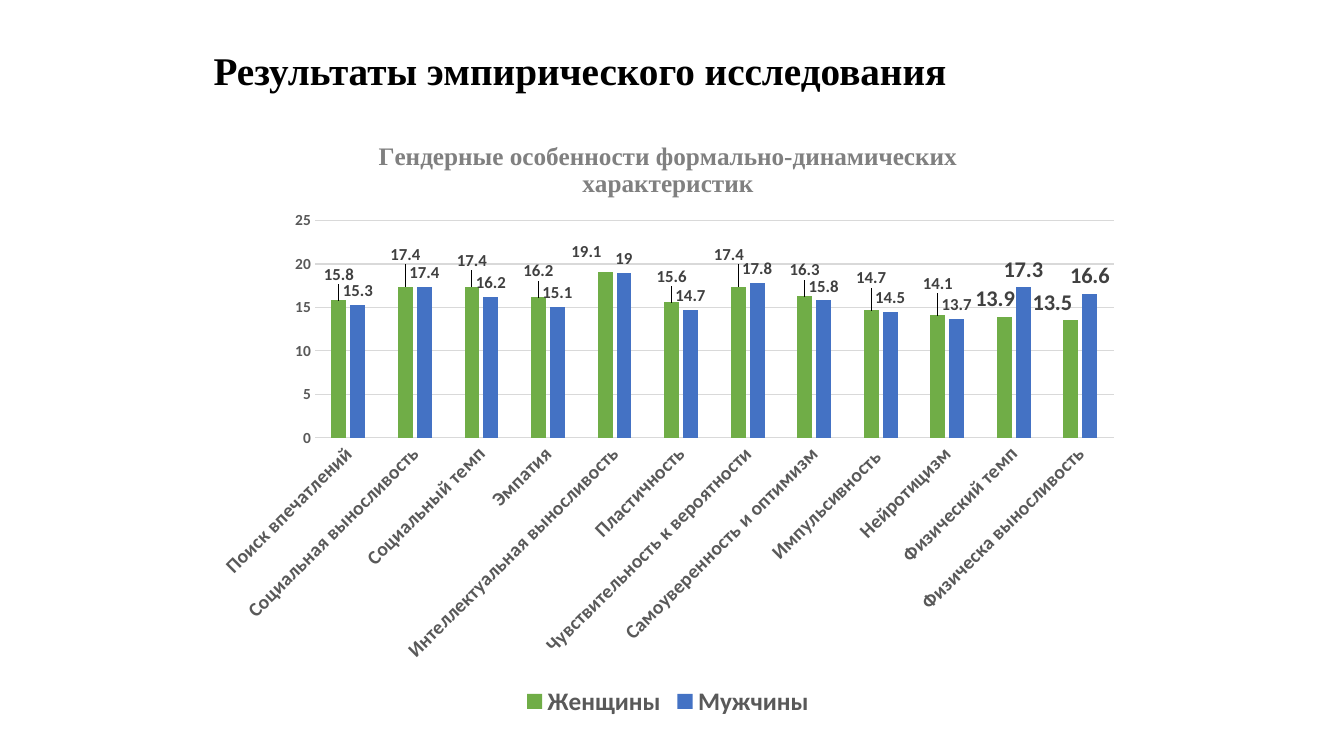
from lxml import etree
from pptx import Presentation
from pptx.chart.data import CategoryChartData
from pptx.dml.color import RGBColor
from pptx.enum import chart as ch
from pptx.oxml.ns import qn
from pptx.util import Inches, Pt

BLACK = RGBColor(0x00, 0x00, 0x00)
GREY = RGBColor(0x80, 0x80, 0x80)
DARK = RGBColor(0x40, 0x40, 0x40)
MID = RGBColor(0x59, 0x59, 0x59)
PALE = RGBColor(0xD9, 0xD9, 0xD9)
GREEN = RGBColor(0x70, 0xAD, 0x47)
BLUE = RGBColor(0x44, 0x72, 0xC4)
SERIF, SANS = "Times New Roman", "Calibri"

TRAITS = {
    "Поиск впечатлений": (15.8, 15.3),
    "Социальная выносливость": (17.4, 17.4),
    "Социальный темп": (17.4, 16.2),
    "Эмпатия": (16.2, 15.1),
    "Интеллектуальная выносливость": (19.1, 19),
    "Пластичность": (15.6, 14.7),
    "Чувствительность к вероятности": (17.4, 17.8),
    "Самоуверенность и оптимизм": (16.3, 15.8),
    "Импульсивность ": (14.7, 14.5),
    "Нейротицизм": (14.1, 13.7),
    "Физический темп": (13.9, 17.3),
    "Физическа выносливость": (13.5, 16.6),
}
GROUPS = (("Женщины", GREEN), ("Мужчины", BLUE))
SHIFTS = [(0, -.02), (0, -.03), (0, -.02), (0, -.02), (-.02, -.01), (0, -.02),
          (-.01, -.03), (0, -.02), (0, -.03), (0, -.03), (-.01, 0), (-.02, 0)]
BIG = (10, 11)


def style(font, size, color, name=SANS):
    """Format a font as bold text."""
    looks = {"size": Pt(size), "bold": True, "name": name}
    for key, value in looks.items():
        setattr(font, key, value)
    font.color.rgb = color


def layout(parent, index, **values):
    """Put a manual layout into a chart element."""
    for old in parent.findall(qn("c:layout")):
        parent.remove(old)
    node = etree.Element(qn("c:layout"))
    manual = etree.SubElement(node, qn("c:manualLayout"))
    for key, value in values.items():
        etree.SubElement(manual, qn("c:" + key)).set("val", str(value))
    parent.insert(index, node)


def add_title(slide, left, top, width, height):
    """Add the slide heading."""
    frame = slide.shapes.add_textbox(left, top, width, height).text_frame
    frame.word_wrap = True
    run = frame.paragraphs[0].add_run()
    run.text = "Результаты эмпирического исследования"
    style(run.font, 28, BLACK, SERIF)


def set_axes(chart):
    """Format both axes and the grid."""
    for axis, size in ((chart.category_axis, 14), (chart.value_axis, 11)):
        axis.major_tick_mark = axis.minor_tick_mark = ch.XL_TICK_MARK.NONE
        style(axis.tick_labels.font, size, MID)
    cats, vals = chart.category_axis, chart.value_axis
    vals.minimum_scale, vals.maximum_scale, vals.major_unit = 0, 25, 5
    vals.has_major_gridlines = True
    for line in (cats.format.line, vals.major_gridlines.format.line):
        line.color.rgb, line.width = PALE, Pt(.75)
    vals.format.line.fill.background()
    body = chart.element.xpath(".//c:catAx/c:txPr/a:bodyPr")[0]
    body.set("rot", "-2700000")
    body.set("vert", "horz")


def set_labels(series, shifts):
    """Label the bars, with larger figures and shifted places where needed."""
    labels = series.data_labels
    labels.show_value = True
    labels.position = ch.XL_LABEL_POSITION.OUTSIDE_END
    style(labels.font, 12, DARK)
    for i in range(len(TRAITS)):
        if i not in BIG and not shifts:
            continue
        label = series.points[i].data_label
        style(label.font, 16 if i in BIG else 12, DARK)
        label.position = ch.XL_LABEL_POSITION.OUTSIDE_END


def add_bars(slide, left, top, width, height):
    """Add the clustered column chart."""
    data = CategoryChartData()
    data.categories = list(TRAITS)
    for (name, _), vals in zip(GROUPS, zip(*TRAITS.values())):
        data.add_series(name, vals)
    chart = slide.shapes.add_chart(
        ch.XL_CHART_TYPE.COLUMN_CLUSTERED, left, top, width, height, data).chart
    style(chart.font, 11, BLACK)
    chart.has_title = True
    para = chart.chart_title.text_frame.paragraphs[0]
    run = para.add_run()
    run.text = "Гендерные особенности формально-динамических характеристик"
    style(run.font, 18, GREY, SERIF)
    for node in chart.element.xpath("c:chart/c:title/c:overlay"):
        node.set("val", "0")
    chart.has_legend = True
    chart.legend.position = ch.XL_LEGEND_POSITION.BOTTOM
    chart.legend.include_in_layout = False
    style(chart.legend.font, 18, MID)
    set_axes(chart)
    plot = chart.plots[0]
    plot.gap_width, plot.overlap, plot.vary_by_categories = 219, -27, False
    for series, (_, color), shifts in zip(plot.series, GROUPS, (SHIFTS, None)):
        series.format.fill.solid()
        series.format.fill.fore_color.rgb = color
        set_labels(series, shifts)
    women = chart.element.xpath(".//c:ser[1]/c:dLbls/c:dLbl")
    for label, (x, y) in zip(women, SHIFTS):
        layout(label, 1, x=x, y=y)
    area = chart.element.xpath(".//c:plotArea")[0]
    layout(area, 0, layoutTarget="inner", xMode="edge", yMode="edge",
           x=.12, y=.17, w=.86, h=.36)


def main():
    """Build and save the slide."""
    deck = Presentation()
    deck.slide_width, deck.slide_height = Inches(13.33), Inches(7.5)
    slide = deck.slides.add_slide(deck.slide_layouts[6])
    add_title(slide, Inches(2.02), Inches(.41), Inches(9.26), Inches(.57))
    add_bars(slide, Inches(2.02), Inches(1.17), Inches(9.21), Inches(5.99))
    deck.save("out.pptx")


if __name__ == "__main__":
    main()
